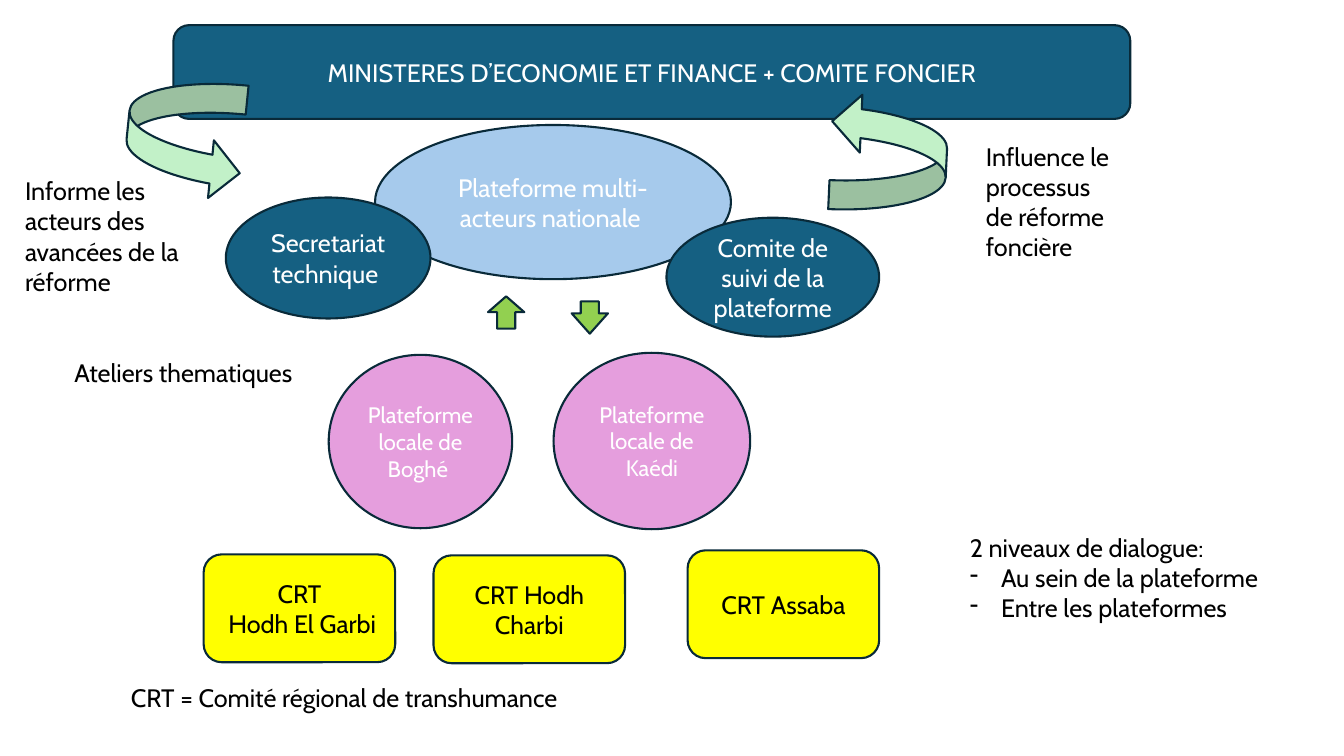
from lxml.etree import SubElement
from pptx import Presentation
from pptx.dml.color import RGBColor
from pptx.enum.shapes import MSO_SHAPE as Shape
from pptx.enum.text import MSO_ANCHOR as Anchor, MSO_AUTO_SIZE as AutoSize, PP_ALIGN as Align
from pptx.oxml.ns import qn
from pptx.util import Inches, Pt

COLORS = {
    "outline": "092A39",
    "ministry": "156082",
    "national": "A6CAEC",
    "local": "E59EDD",
    "region": "FFFF00",
    "exchange": "92D050",
    "loop": "C2F1C8",
    "light": "FFFFFF",
    "dark": "000000",
}


def color(name):
    return RGBColor.from_string(COLORS[name])


def write(frame, lines, font="Cabin", size=18, ink="dark", align=None, dash_from=None):
    """Write one paragraph per line; lines from index dash_from on get a dash bullet."""
    for index, line in enumerate(lines):
        para = frame.paragraphs[0] if index == 0 else frame.add_paragraph()
        para.alignment = align
        span = para.add_run()
        span.text = line
        span.font.name = font
        span.font.size = Pt(size)
        span.font.color.rgb = color(ink)
        if dash_from is not None and index >= dash_from:
            properties = para._p.get_or_add_pPr()
            indent = Inches(0.31)
            properties.set("marL", str(indent))
            properties.set("indent", str(-indent))
            SubElement(properties, qn("a:buChar")).set("char", "-")


class Diagram:
    """Holds the current slide and the outline style shared by its shapes."""

    def __init__(self, slide, line_width=1.5):
        self.shapes = slide.shapes
        self.line_width = Pt(line_width)

    def shape(self, kind, place, fill, rotation=0, adjustments=()):
        shape = self.shapes.add_shape(kind, *map(Inches, place))
        shape.shadow.inherit = False
        shape.fill.solid()
        shape.fill.fore_color.rgb = color(fill)
        shape.line.color.rgb = color("outline")
        shape.line.width = self.line_width
        shape.rotation = rotation
        for index, value in enumerate(adjustments):
            shape.adjustments[index] = value
        return shape

    def node(self, kind, place, fill, *lines, size=18, ink="light"):
        frame = self.shape(kind, place, fill).text_frame
        frame.word_wrap = True
        frame.vertical_anchor = Anchor.MIDDLE
        write(frame, lines, size=size, ink=ink, align=Align.CENTER)

    def label(self, place, *lines, wrap=True, dash_from=None):
        frame = self.shapes.add_textbox(*map(Inches, place)).text_frame
        frame.word_wrap = wrap
        frame.auto_size = AutoSize.SHAPE_TO_FIT_TEXT
        write(frame, lines, dash_from=dash_from)


def main():
    deck = Presentation()
    deck.slide_width, deck.slide_height = Inches(13.33), Inches(7.5)
    diagram = Diagram(deck.slides.add_slide(deck.slide_layouts[6]))

    diagram.node(Shape.OVAL, (3.72, 1.24, 3.53, 1.53), "national",
                 "Plateforme multi-acteurs nationale ")
    diagram.node(Shape.OVAL, (3.26, 3.52, 1.82, 1.72), "local",
                 "Plateforme locale de Boghé ", size=16)
    diagram.node(Shape.OVAL, (5.49, 3.5, 1.95, 1.75), "local",
                 "Plateforme locale de Kaédi", size=16)

    diagram.shape(Shape.DOWN_ARROW, (5.67, 2.99, 0.36, 0.32), "exchange",
                  adjustments=(0.5, 0.63))
    diagram.shape(Shape.DOWN_ARROW, (4.84, 2.94, 0.36, 0.32), "exchange",
                  rotation=180, adjustments=(0.5, 0.49))

    diagram.node(Shape.OVAL, (6.61, 2.16, 2.11, 1.18), "ministry",
                 "Comite de suivi de la plateforme")
    diagram.node(Shape.OVAL, (2.24, 1.96, 2.03, 1.2), "ministry", "Secretariat technique ")

    regions = [
        (2.02, 5.5, ("CRT", " Hodh El Garbi")),
        (6.82, 5.46, ("CRT Assaba",)),
        (4.3, 5.51, ("CRT Hodh Charbi",)),
    ]
    for left, top, lines in regions:
        diagram.node(Shape.ROUNDED_RECTANGLE, (left, top, 1.9, 1.07), "region",
                     *lines, ink="dark")

    diagram.node(Shape.ROUNDED_RECTANGLE, (1.72, 0.25, 9.49, 0.93), "ministry",
                 "MINISTERES D’ECONOMIE ET FINANCE + COMITE FONCIER")
    for left, top, rotation in [(8.24, 0.94, 182.6), (1.26, 0.79, 5.8)]:
        diagram.shape(Shape.CURVED_RIGHT_ARROW, (left, top, 1.15, 1.16), "loop",
                      rotation=rotation)

    diagram.label((0.64, 3.5, 2.46, 0.4), "Ateliers thematiques", wrap=False)
    diagram.label((9.52, 5.23, 3.39, 1.01), "2 niveaux de dialogue:",
                  "Au sein de la plateforme", "Entre les plateformes", dash_from=1)
    diagram.label((1.2, 6.72, 4.94, 0.4), "CRT = Comité régional de transhumance")
    diagram.label((9.68, 1.35, 1.55, 1.31), "Influence le processus de réforme foncière")
    diagram.label((0.15, 1.69, 1.73, 1.31), "Informe les acteurs des avancées de la réforme")

    deck.save("out.pptx")


if __name__ == "__main__":
    main()
